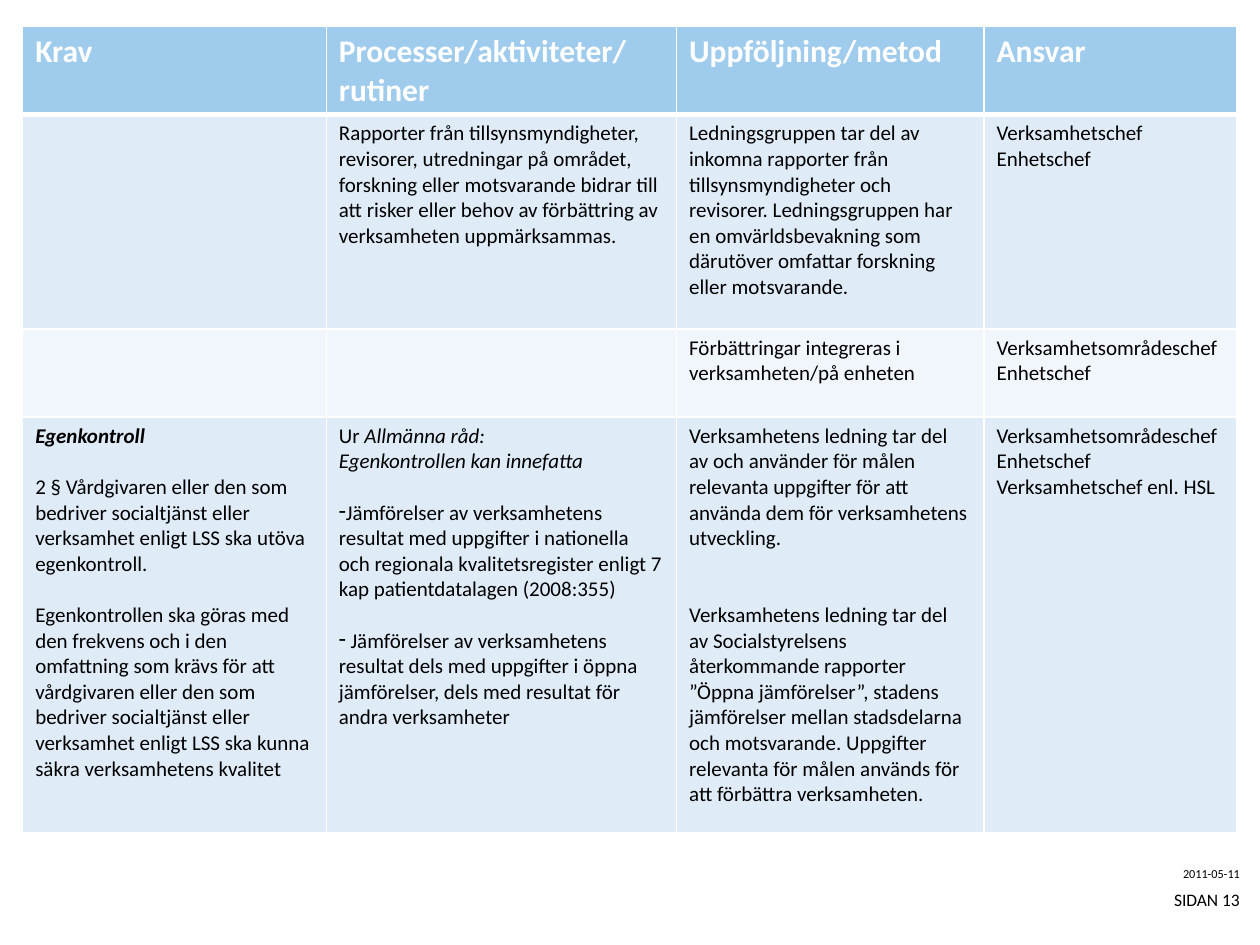
from dataclasses import dataclass

from lxml import etree
from pptx import Presentation
from pptx.dml.color import RGBColor
from pptx.enum.text import MSO_ANCHOR, PP_ALIGN
from pptx.oxml.ns import qn
from pptx.util import Inches, Pt

RIGHT = PP_ALIGN.RIGHT
MIDDLE = MSO_ANCHOR.MIDDLE


@dataclass(frozen=True)
class Theme:
    font: str = "Calibri"
    white: str = "FFFFFF"
    black: str = "000000"
    header_fill: str = "9FCBED"
    odd_fill: str = "DFECF8"
    even_fill: str = "F0F6FC"
    header_size: float = 18
    body_size: float = 12
    date_size: float = 7
    page_size: float = 10
    blank_line: float = 14.65
    thin_line: float = 1
    thick_line: float = 3


@dataclass(frozen=True)
class Line:
    runs: tuple
    blank_lines: int = 0
    dash: bool = False


THEME = Theme()
COLUMN_WIDTHS = (2.41, 2.78, 2.44, 2.01)
ROW_HEIGHTS = (0.7, 1.7, 0.7, 3.3)
HEADINGS = ("Krav", "Processer/aktiviteter/rutiner", "Uppföljning/metod", "Ansvar")


def plain(text, blank_lines=0, dash=False):
    return Line(((text, False, False),), blank_lines, dash)


BODY = (
    (
        (),
        (plain("Rapporter från tillsynsmyndigheter, revisorer, utredningar på området, "
               "forskning eller motsvarande bidrar till att risker eller behov av "
               "förbättring av verksamheten uppmärksammas."),),
        (plain("Ledningsgruppen tar del av inkomna rapporter från tillsynsmyndigheter "
               "och revisorer. Ledningsgruppen har en omvärldsbevakning som därutöver "
               "omfattar forskning eller motsvarande."),),
        (plain("Verksamhetschef"), plain("Enhetschef")),
    ),
    (
        (),
        (),
        (plain("Förbättringar integreras i verksamheten/på enheten"),),
        (plain("Verksamhetsområdeschef"), plain("Enhetschef")),
    ),
    (
        (
            Line((("Egenkontroll", True, True),)),
            plain("2 § Vårdgivaren eller den som bedriver socialtjänst eller verksamhet "
                  "enligt LSS ska utöva egenkontroll.", 1),
            plain("Egenkontrollen ska göras med den frekvens och i den omfattning som "
                  "krävs för att vårdgivaren eller den som bedriver socialtjänst eller "
                  "verksamhet enligt LSS ska kunna säkra verksamhetens kvalitet", 1),
        ),
        (
            Line((("Ur", False, False), (" Allmänna råd:", False, True))),
            Line((("Egenkontrollen kan innefatta", False, True),)),
            plain("Jämförelser av verksamhetens resultat med uppgifter i nationella och "
                  "regionala kvalitetsregister enligt 7 kap patientdatalagen (2008:355)",
                  1, True),
            plain(" Jämförelser av verksamhetens resultat dels med uppgifter i öppna "
                  "jämförelser, dels med resultat för andra verksamheter", 1, True),
        ),
        (
            plain("Verksamhetens ledning tar del av och använder för målen relevanta "
                  "uppgifter för att använda dem för verksamhetens utveckling."),
            plain("Verksamhetens ledning tar del av Socialstyrelsens återkommande rapporter "
                  "”Öppna jämförelser”, stadens jämförelser mellan stadsdelarna och "
                  "motsvarande. Uppgifter relevanta för målen används för att förbättra "
                  "verksamheten.", 2),
        ),
        (
            plain("Verksamhetsområdeschef"),
            plain("Enhetschef"),
            plain("Verksamhetschef enl. HSL"),
        ),
    ),
)


def add_run(paragraph, text, size, color, bold=False, italic=False):
    run = paragraph.add_run()
    run.text = text
    run.font.name = THEME.font
    run.font.size = Pt(size)
    run.font.color.rgb = RGBColor.from_string(color)
    run.font.bold = bold
    run.font.italic = italic


def add_dash(paragraph):
    properties = paragraph._p.get_or_add_pPr()
    properties.set("marL", "0")
    properties.set("indent", "0")
    etree.SubElement(properties, qn("a:buFontTx"))
    etree.SubElement(properties, qn("a:buChar")).set("char", "-")


def set_borders(cell, top, bottom):
    properties = cell._tc.get_or_add_tcPr()
    sides = {"lnL": THEME.thin_line, "lnR": THEME.thin_line, "lnT": top, "lnB": bottom}
    for side, width in sides.items():
        border = etree.SubElement(properties, qn(f"a:{side}"))
        border.set("w", str(Pt(width)))
        fill = etree.SubElement(border, qn("a:solidFill"))
        etree.SubElement(fill, qn("a:srgbClr")).set("val", THEME.white)


def set_fill(cell, color):
    cell.fill.solid()
    cell.fill.fore_color.rgb = RGBColor.from_string(color)


def fill_header_cell(cell, heading):
    set_borders(cell, THEME.thin_line, THEME.thick_line)
    set_fill(cell, THEME.header_fill)
    add_run(cell.text_frame.paragraphs[0], heading, THEME.header_size, THEME.white, bold=True)


def fill_body_cell(cell, lines, row_number):
    set_borders(cell, THEME.thick_line if row_number == 1 else THEME.thin_line, THEME.thin_line)
    set_fill(cell, THEME.odd_fill if row_number % 2 else THEME.even_fill)
    frame = cell.text_frame
    for index, line in enumerate(lines):
        paragraph = frame.add_paragraph() if index else frame.paragraphs[0]
        if line.blank_lines:
            paragraph.space_before = Pt(line.blank_lines * THEME.blank_line)
        if line.dash:
            add_dash(paragraph)
        for text, bold, italic in line.runs:
            add_run(paragraph, text, THEME.body_size, THEME.black, bold, italic)


def add_requirements_table(slide):
    table = slide.shapes.add_table(
        len(ROW_HEIGHTS), len(COLUMN_WIDTHS), Inches(0.18), Inches(0.21),
        Inches(sum(COLUMN_WIDTHS)), Inches(sum(ROW_HEIGHTS))).table
    for column, width in zip(table.columns, COLUMN_WIDTHS):
        column.width = Inches(width)
    for row, height in zip(table.rows, ROW_HEIGHTS):
        row.height = Inches(height)
    for column_number, heading in enumerate(HEADINGS):
        fill_header_cell(table.cell(0, column_number), heading)
    for row_number, row in enumerate(BODY, start=1):
        for column_number, lines in enumerate(row):
            fill_body_cell(table.cell(row_number, column_number), lines, row_number)


def add_footer(slide, text, top, size):
    box = slide.shapes.add_textbox(Inches(8.8), Inches(top), Inches(1.04), Inches(0.19))
    frame = box.text_frame
    frame.word_wrap = True
    frame.vertical_anchor = MIDDLE
    frame.margin_left = frame.margin_right = frame.margin_top = frame.margin_bottom = 0
    paragraph = frame.paragraphs[0]
    paragraph.alignment = RIGHT
    add_run(paragraph, text, size, THEME.black)


def main():
    presentation = Presentation()
    presentation.slide_width = Inches(10)
    presentation.slide_height = Inches(7.5)
    slide = presentation.slides.add_slide(presentation.slide_layouts[6])
    add_footer(slide, "2011-05-11", 6.84, THEME.date_size)
    add_footer(slide, "SIDAN 13", 7.04, THEME.page_size)
    add_requirements_table(slide)
    presentation.save("out.pptx")


if __name__ == "__main__":
    main()
